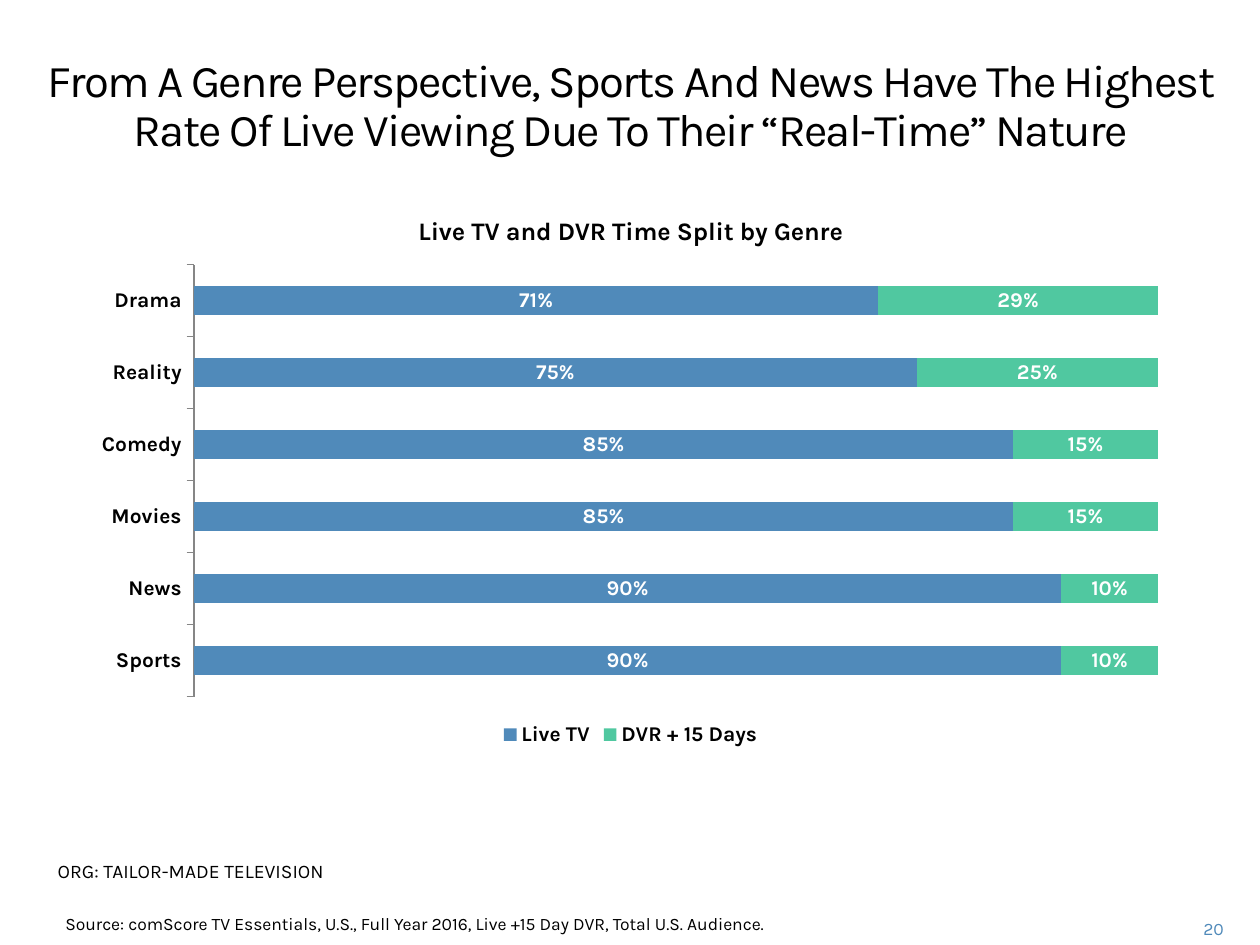
from lxml import etree
from pptx import Presentation
from pptx.chart.data import CategoryChartData
from pptx.dml.color import RGBColor
from pptx.enum.chart import XL_CHART_TYPE as ChartType, XL_LEGEND_POSITION as LegendPosition
from pptx.enum.chart import XL_TICK_MARK as TickMark
from pptx.enum.text import MSO_ANCHOR as Anchor, PP_ALIGN as Align
from pptx.oxml.ns import qn
from pptx.util import Inches, Pt

TITLE = ("From A Genre Perspective, Sports And News Have The Highest "
         "Rate Of Live Viewing Due To Their “Real-Time” Nature")
REPORT = "ORG: TAILOR-MADE TELEVISION"
SOURCE = ("Source: comScore TV Essentials, U.S., Full Year 2016, "
          "Live +15 Day DVR, Total U.S. Audience.")
PAGE_NUMBER = "20"
CHART_TITLE = "Live TV and DVR Time Split by Genre"
GENRES = ["Sports", "News", "Movies", "Comedy", "Reality", "Drama"]
LIVE_SHARE = [0.9, 0.9, 0.85, 0.85, 0.75, 0.71]

FONT = "Karla"
BLACK = RGBColor(0x00, 0x00, 0x00)
WHITE = RGBColor(0xFF, 0xFF, 0xFF)
GRAY = RGBColor(0x86, 0x86, 0x86)
BLUE = RGBColor(0x50, 0x8A, 0xBA)
GREEN = RGBColor(0x50, 0xC8, 0xA0)
SERIES = [
    ("Live TV", LIVE_SHARE, BLUE),
    ("DVR + 15 Days", [round(1 - share, 2) for share in LIVE_SHARE], GREEN),
]
CHART_AREA = (0.64, 1.53, 8.73, 4.44)
PLOT_AREA = (1.54, 2.1, 7.65, 3.43)


def style_font(font, size, color=BLACK, bold=False):
    font.name = FONT
    font.size = Pt(size)
    font.bold = bold
    font.color.rgb = color


def write_text(box, text, area, size, color=BLACK, align=Align.LEFT,
               anchor=Anchor.TOP, line_height=None, spacing=None):
    box.left, box.top, box.width, box.height = map(Inches, area)
    frame = box.text_frame
    frame.word_wrap = True
    frame.vertical_anchor = anchor
    para = frame.paragraphs[0]
    para.alignment = align
    para.space_before = Pt(0)
    if line_height:
        para.line_spacing = Pt(line_height)
    span = para.add_run()
    span.text = text
    style_font(span.font, size, color)
    if spacing:
        span.font._element.set("spc", str(spacing * 100))


def place_plot(chart):
    plot_area = chart._chartSpace.chart.plotArea
    for old in plot_area.findall(qn("c:layout")):
        plot_area.remove(old)
    layout = etree.Element(qn("c:layout"))
    manual = etree.SubElement(layout, qn("c:manualLayout"))
    left, top, width, height = CHART_AREA
    x, y, w, h = PLOT_AREA
    settings = {
        "layoutTarget": "inner", "xMode": "edge", "yMode": "edge",
        "x": round((x - left) / width, 4), "y": round((y - top) / height, 4),
        "w": round(w / width, 4), "h": round(h / height, 4),
    }
    for name, value in settings.items():
        etree.SubElement(manual, qn(f"c:{name}")).set("val", str(value))
    plot_area.insert(0, layout)


def add_genre_chart(page):
    data = CategoryChartData(number_format="0%")
    data.categories = GENRES
    for name, shares, _ in SERIES:
        data.add_series(name, shares)
    chart = page.shapes.add_chart(
        ChartType.BAR_STACKED, *map(Inches, CHART_AREA), data).chart
    style_font(chart.font, 12, bold=True)

    chart.has_title = True
    chart.chart_title.include_in_layout = False
    para = chart.chart_title.text_frame.paragraphs[0]
    span = para.add_run()
    span.text = CHART_TITLE
    style_font(span.font, 14.4, bold=True)

    chart.has_legend = True
    chart.legend.position = LegendPosition.BOTTOM
    chart.legend.include_in_layout = False

    genre_axis = chart.category_axis
    genre_axis.major_tick_mark = TickMark.OUTSIDE
    genre_axis.has_major_gridlines = False
    genre_axis.format.line.color.rgb = GRAY
    share_axis = chart.value_axis
    share_axis.minimum_scale = 0
    share_axis.maximum_scale = 1
    share_axis.has_major_gridlines = False
    share_axis.visible = False

    plot = chart.plots[0]
    plot.gap_width = 150
    plot.overlap = 100
    plot.vary_by_categories = False
    for series, (_, _, color) in zip(plot.series, SERIES):
        series.format.fill.solid()
        series.format.fill.fore_color.rgb = color
        labels = series.data_labels
        labels.show_value = True
        labels.number_format = "0%"
        labels.number_format_is_linked = False
        style_font(labels.font, 12, WHITE, bold=True)
    place_plot(chart)


def main():
    deck = Presentation()
    deck.slide_width, deck.slide_height = Inches(10), Inches(7.5)
    page = deck.slides.add_slide(deck.slide_layouts[5])
    write_text(page.shapes.title, TITLE, (0.17, 0.41, 9.67, 0.49), 26,
               align=Align.CENTER, line_height=28, spacing=-1)
    add_genre_chart(page)
    notes = [
        (REPORT, (0.36, 6.77, 3.08, 0.47), 11, {}),
        (SOURCE, (0.42, 7.2, 6.45, 0.3), 10, {}),
        (PAGE_NUMBER, (9.2, 7.24, 0.61, 0.25), 10,
         {"color": BLUE, "align": Align.RIGHT, "anchor": Anchor.MIDDLE}),
    ]
    for text, area, size, options in notes:
        box = page.shapes.add_textbox(*map(Inches, area))
        write_text(box, text, area, size, **options)
    deck.save("out.pptx")


if __name__ == "__main__":
    main()
